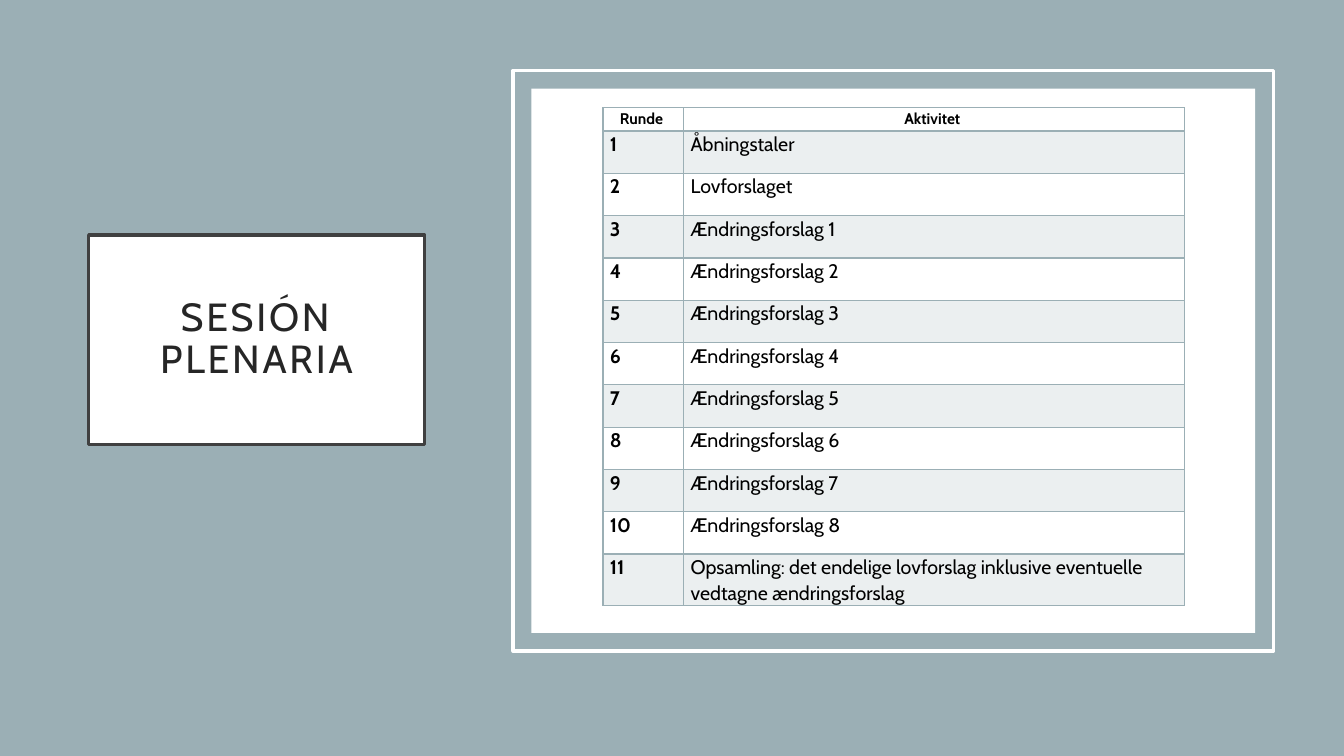
"""Build the plenary session slide with its table of rounds."""
import pptx
import pptx.dml.color
import pptx.enum.shapes
import pptx.enum.text
import pptx.oxml
import pptx.oxml.ns
import pptx.util
from pptx.util import Inches, Pt

TITLE = "SESIÓN PLENARIA"
HEAD = ("Runde ", "Aktivitet ")
ACTS = [
    "Åbningstaler",
    "Lovforslaget",
    *[f"Ændringsforslag {num}" for num in range(1, 9)],
    "Opsamling: det endelige lovforslag inklusive eventuelle vedtagne ændringsforslag",
]
ROWS = [HEAD] + [(str(num), act) for num, act in enumerate(ACTS, 1)]
COLS = (0.8, 4.97)
HIGHS = [0.23] + [0.42] * (len(ACTS) - 1) + [0.51]
FONT = "Cabin"
HUES = {"teal": "9BAFB5", "white": "FFFFFF", "edge": "404040",
        "title": "262626", "text": "000000"}
ALIGN = pptx.enum.text.PP_ALIGN


def hue(name):
    return pptx.dml.color.RGBColor.from_string(HUES[name])


def paint(shape, fill=None, line=None):
    if fill:
        shape.fill.solid()
        shape.fill.fore_color.rgb = hue(fill)
    else:
        shape.fill.background()
    if line:
        shape.line.color.rgb = hue(line)
        shape.line.width = Pt(2.5)
    else:
        shape.line.fill.background()


def add_box(slide, left, top, width, height, fill=None, line=None):
    box = slide.shapes.add_shape(
        pptx.enum.shapes.MSO_SHAPE.RECTANGLE,
        Inches(left), Inches(top), Inches(width), Inches(height))
    box.shadow.inherit = False
    paint(box, fill, line)


def add_run(para, text, size, color, bold=False):
    run = para.add_run()
    run.text = text
    run.font.name = FONT
    run.font.size = Pt(size)
    run.font.bold = bold
    run.font.color.rgb = hue(color)
    return run


def set_title(slide):
    title = slide.shapes.title
    title.left, title.top = Inches(0.88), Inches(2.33)
    title.width, title.height = Inches(3.33), Inches(2.08)
    paint(title, "white", "edge")
    frame = title.text_frame
    frame.word_wrap = True
    frame.auto_size = pptx.enum.text.MSO_AUTO_SIZE.NONE
    frame.vertical_anchor = pptx.enum.text.MSO_ANCHOR.MIDDLE
    frame.margin_left = frame.margin_right = Inches(0.3)
    frame.margin_top = frame.margin_bottom = Inches(0.2)
    para = frame.paragraphs[0]
    para.alignment = ALIGN.CENTER
    para.line_spacing = 0.9
    run = add_run(para, TITLE, 28, "title")
    run.font._element.set("spc", "200")
    slide.shapes._spTree.append(title._element)


def set_edges(cell, row):
    props = cell._tc.get_or_add_tcPr()
    thick = {"T": row == 1, "B": row == 0}
    for side in "LRTB":
        width = Pt(2 if thick.get(side) else 1)
        props.append(pptx.oxml.parse_xml(
            f'<a:ln{side} {pptx.oxml.ns.nsdecls("a")} w="{width}"><a:solidFill>'
            f'<a:srgbClr val="{HUES["teal"]}"/></a:solidFill></a:ln{side}>'))


def set_fill(cell, row):
    if row % 2 == 0:
        cell.fill.background()
        return
    cell.fill.solid()
    cell.fill.fore_color.rgb = hue("teal")
    color = cell._tc.tcPr.find(pptx.oxml.ns.qn("a:solidFill"))[0]
    color.append(pptx.oxml.parse_xml(
        f'<a:alpha {pptx.oxml.ns.nsdecls("a")} val="20000"/>'))


def set_cell(cell, text, row, col):
    cell.margin_left = cell.margin_right = Inches(0.07)
    cell.margin_top = cell.margin_bottom = 0
    para = cell.text_frame.paragraphs[0]
    para.line_spacing = 1.07
    para.space_after = Pt(8)
    if row == 0:
        para.alignment = ALIGN.CENTER
    else:
        para.alignment = ALIGN.LEFT
        para.space_before = Pt(12)
    add_run(para, text, 14 if row else 11, "text", row == 0 or col == 0)
    set_edges(cell, row)
    set_fill(cell, row)


def add_rounds(slide):
    table = slide.shapes.add_table(
        len(ROWS), len(COLS), Inches(5.98), Inches(1.07),
        Inches(sum(COLS)), Inches(sum(HIGHS))).table
    table.first_row = table.horz_banding = False
    for col, width in enumerate(COLS):
        table.columns[col].width = Inches(width)
    for row, (high, texts) in enumerate(zip(HIGHS, ROWS)):
        table.rows[row].height = Inches(high)
        for col, text in enumerate(texts):
            set_cell(table.cell(row, col), text, row, col)


def main():
    deck = pptx.Presentation()
    deck.slide_width, deck.slide_height = Inches(13.33), Inches(7.5)
    slide = deck.slides.add_slide(deck.slide_layouts[5])
    add_box(slide, 0, 0, 13.33, 7.5, fill="teal")
    set_title(slide)
    add_box(slide, 5.09, 0.7, 7.54, 5.76, line="white")
    add_box(slide, 5.27, 0.88, 7.18, 5.4, fill="white")
    add_rounds(slide)
    deck.save("out.pptx")


if __name__ == "__main__":
    main()
